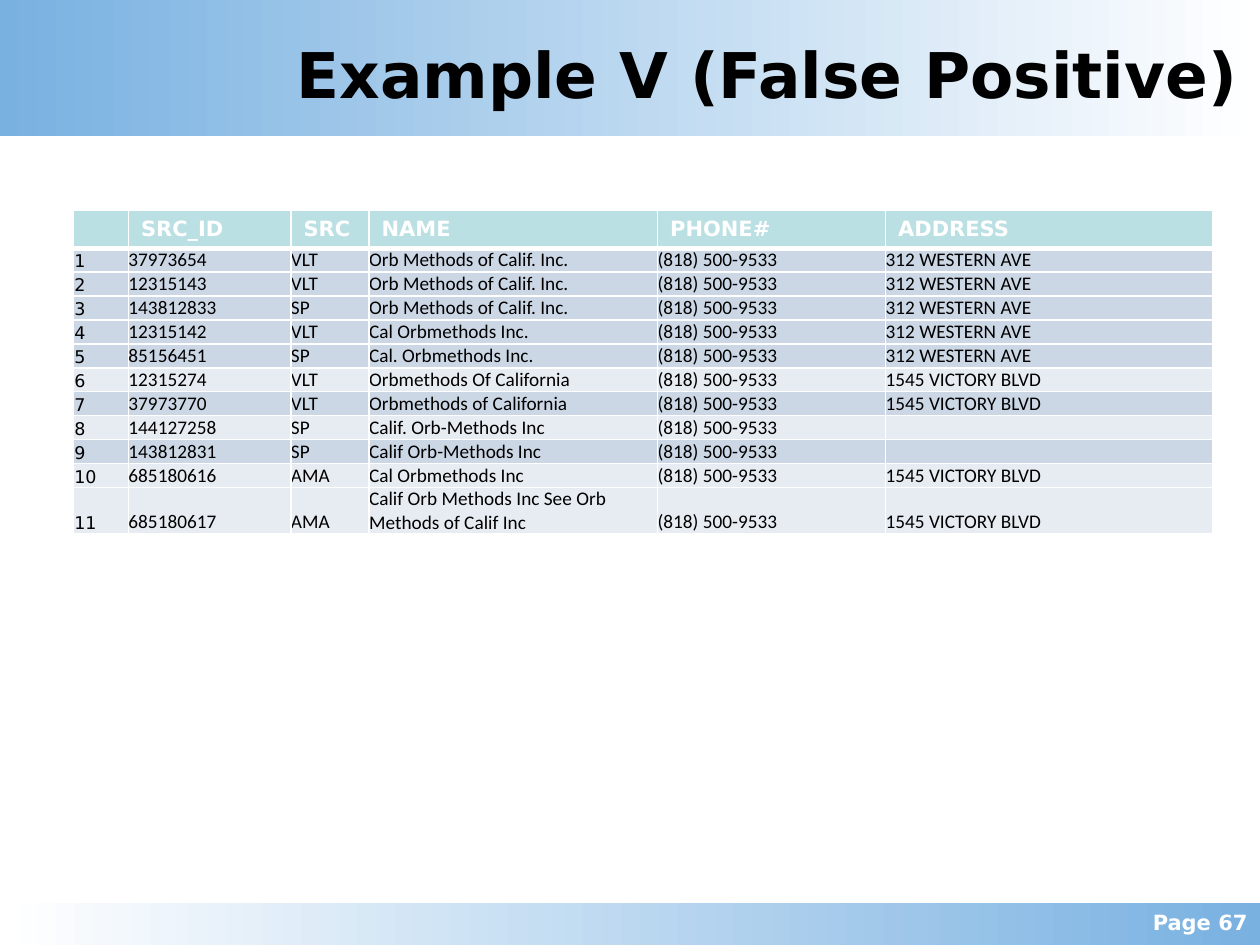
from lxml import etree
from pptx import Presentation
from pptx.dml.color import RGBColor
from pptx.enum import shapes, text
from pptx.oxml.ns import qn
from pptx.util import Inches, Pt

TITLE = "Example V (False Positive)"
PAGE_LABEL = "Page 67"
HEADINGS = ["", "SRC_ID", "SRC", "NAME", "PHONE#", "ADDRESS"]
PHONE = "(818) 500-9533"
WESTERN = "312 WESTERN AVE"
VICTORY = "1545 VICTORY BLVD"
DARK, LIGHT = "CCD7E5", "E7ECF2"
RECORDS = [
    ("37973654", "VLT", "Orb Methods of Calif. Inc.", WESTERN, DARK),
    ("12315143", "VLT", "Orb Methods of Calif. Inc.", WESTERN, DARK),
    ("143812833", "SP", "Orb Methods of Calif. Inc.", WESTERN, DARK),
    ("12315142", "VLT", "Cal Orbmethods Inc.", WESTERN, DARK),
    ("85156451", "SP", "Cal. Orbmethods Inc.", WESTERN, DARK),
    ("12315274", "VLT", "Orbmethods Of California", VICTORY, LIGHT),
    ("37973770", "VLT", "Orbmethods of California", VICTORY, DARK),
    ("144127258", "SP", "Calif. Orb-Methods Inc", "", LIGHT),
    ("143812831", "SP", "Calif Orb-Methods Inc", "", DARK),
    ("685180616", "AMA", "Cal Orbmethods Inc", VICTORY, LIGHT),
    ("685180617", "AMA", "Calif Orb Methods Inc See Orb Methods of Calif Inc", VICTORY, LIGHT),
]
COLUMN_WIDTHS = [0.44, 1.29, 0.62, 2.29, 1.81, 2.6]
ROW_HEIGHTS = [0.29] + [0.19] * (len(RECORDS) - 1) + [0.37]
SANS, BODY = "DejaVu Sans", "Calibri"
WHITE, BLACK, BLUE, TEAL = "FFFFFF", "000000", "79B1E1", "BBE0E3"


def color(value):
    return RGBColor.from_string(value)


def add_span(para, words, size, font, ink, bold=False):
    span = para.add_run()
    span.text = words
    span.font.size = Pt(size)
    span.font.name = font
    span.font.bold = bold
    span.font.color.rgb = color(ink)


def add_band(page, top, height, start, end):
    band = page.shapes.add_shape(
        shapes.MSO_SHAPE.RECTANGLE, 0, Inches(top), Inches(10), Inches(height))
    band.shadow.inherit = False
    band.line.fill.background()
    band.fill.gradient()
    band.fill.gradient_angle = 0
    for stop, (position, shade) in zip(band.fill.gradient_stops, [(0, start), (1, end)]):
        stop.position = position
        stop.color.rgb = color(shade)


def add_label(page, place, words, size, ink, anchor):
    box = page.shapes.add_textbox(*[Inches(value) for value in place])
    frame = box.text_frame
    frame.word_wrap = True
    frame.vertical_anchor = anchor
    para = frame.paragraphs[0]
    para.alignment = text.PP_ALIGN.RIGHT
    add_span(para, words, size, SANS, ink, True)


def set_borders(cell, widths):
    properties = cell._tc.get_or_add_tcPr()
    for index, (side, width) in enumerate(zip("LRTB", widths)):
        line = etree.Element(qn(f"a:ln{side}"), w=str(Pt(width)))
        fill = etree.SubElement(line, qn("a:solidFill"))
        etree.SubElement(fill, qn("a:srgbClr"), val=WHITE)
        properties.insert(index, line)


def fill_cell(cell, words, shade, size, font, ink, bold=False, inset=None):
    cell.fill.solid()
    cell.fill.fore_color.rgb = color(shade)
    if inset is not None:
        cell.vertical_anchor = text.MSO_ANCHOR.BOTTOM
        cell.margin_left = cell.margin_right = cell.margin_top = Inches(inset)
        cell.margin_bottom = 0
    para = cell.text_frame.paragraphs[0]
    if words:
        add_span(para, words, size, font, ink, bold)
    else:
        etree.SubElement(para._p, qn("a:endParaRPr"), sz=str(size * 100))


def add_records(page):
    frame = page.shapes.add_table(
        len(ROW_HEIGHTS), len(HEADINGS), Inches(0.58), Inches(1.67),
        Inches(sum(COLUMN_WIDTHS)), Inches(sum(ROW_HEIGHTS)))
    table = frame.table
    for column, width in zip(table.columns, COLUMN_WIDTHS):
        column.width = Inches(width)
    for row, height in zip(table.rows, ROW_HEIGHTS):
        row.height = Inches(height)
    for column, heading in enumerate(HEADINGS):
        cell = table.cell(0, column)
        fill_cell(cell, heading, TEAL, 12, SANS, WHITE, True)
        set_borders(cell, [1, 1, 1, 3])
    for number, (source_id, source, name, address, shade) in enumerate(RECORDS, 1):
        values = [str(number), source_id, source, name, PHONE, address]
        for column, value in enumerate(values):
            cell = table.cell(number, column)
            size, font, inset = (11, BODY, 0) if column else (10, SANS, 0.01)
            fill_cell(cell, value, shade, size, font, BLACK, inset=inset)
            set_borders(cell, [1, 1, 3 if number == 1 else 1, 1])


def main():
    deck = Presentation()
    deck.slide_width, deck.slide_height = Inches(10), Inches(7.5)
    page = deck.slides.add_slide(deck.slide_layouts[6])
    add_band(page, 7.17, 0.33, WHITE, BLUE)
    add_band(page, 0, 1.08, BLUE, WHITE)
    add_label(page, (2.17, 0.17, 7.75, 0.83), TITLE, 36, BLACK, text.MSO_ANCHOR.MIDDLE)
    add_records(page)
    add_label(page, (8.83, 7.17, 1.17, 0.33), PAGE_LABEL, 12, WHITE, text.MSO_ANCHOR.TOP)
    deck.save("out.pptx")


if __name__ == "__main__":
    main()
